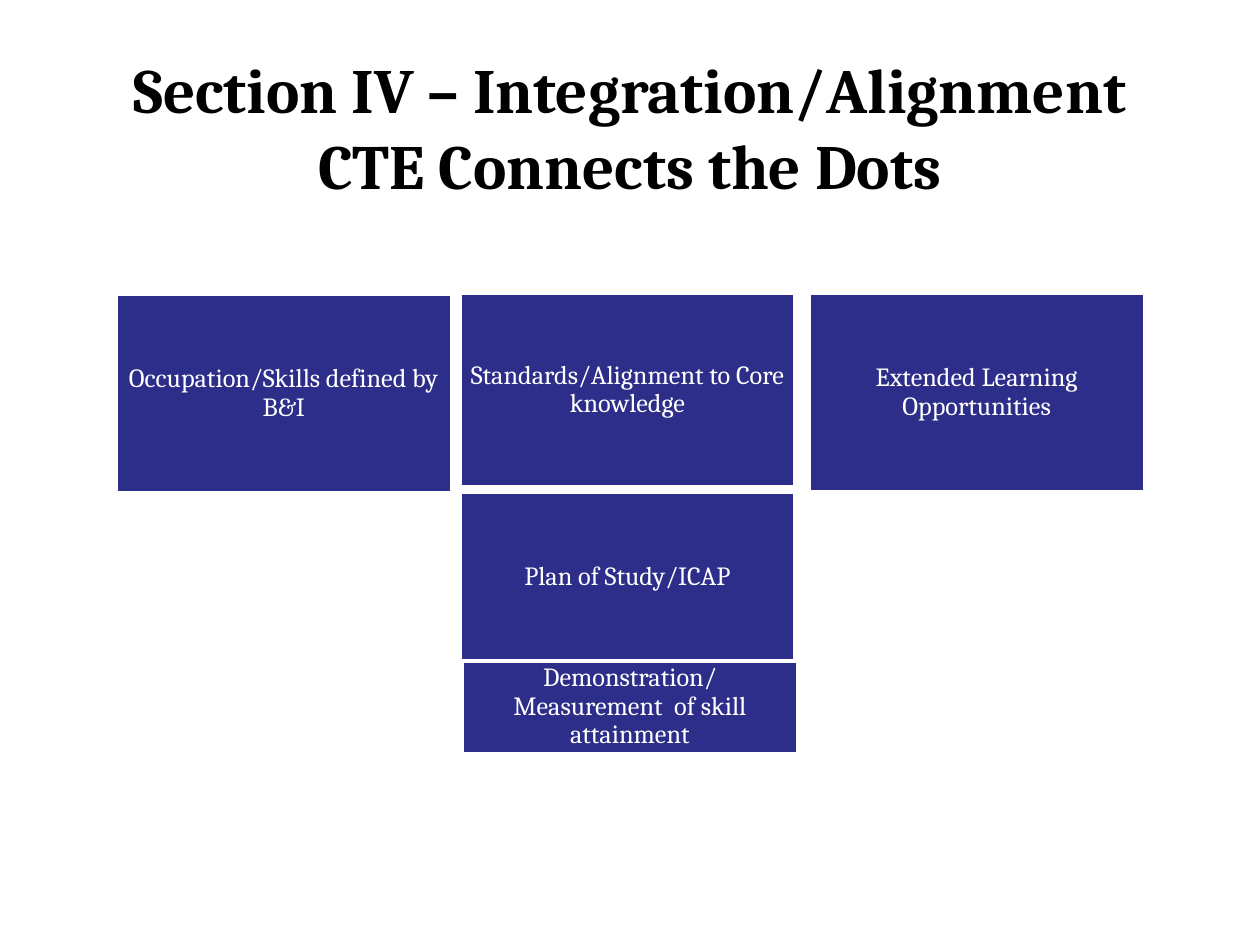
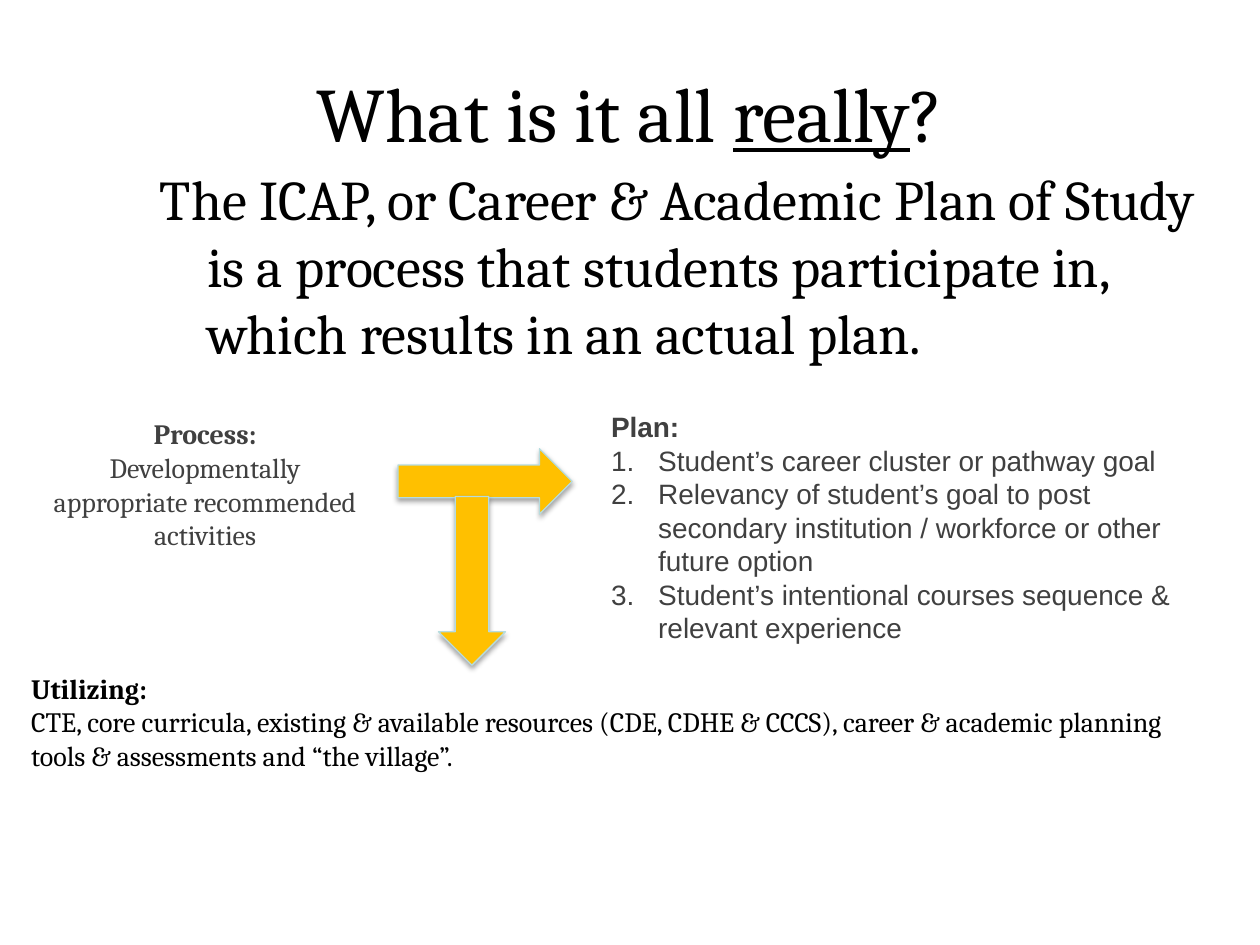
from copy import deepcopy

from lxml.etree import SubElement
from pptx import Presentation
from pptx.dml.color import RGBColor
from pptx.enum.shapes import MSO_SHAPE as Preset
from pptx.enum.text import MSO_ANCHOR as Anchor, MSO_AUTO_SIZE as AutoSize, PP_ALIGN as Align
from pptx.oxml.ns import qn
from pptx.util import Cm, Pt

NAVY = RGBColor(0x2D, 0x2D, 0x8A)
AMBER = RGBColor(0xFF, 0xC0, 0x00)
PALE_TEAL = RGBColor(0xB6, 0xDC, 0xDF)
CHARCOAL = RGBColor(0x40, 0x40, 0x40)
BLACK = RGBColor(0, 0, 0)
WHITE = RGBColor(0xFF, 0xFF, 0xFF)

TITLE_ONLY, TITLE_AND_BODY = 5, 1
HANGING = Cm(0.95)


class Deck:
    serif = "Cambria"
    sans = "Arial"

    def __init__(self):
        self.presentation = Presentation()
        self.presentation.slide_width = Cm(25.4)
        self.presentation.slide_height = Cm(19.05)
        self.slide = None

    def new_slide(self, layout):
        layouts = self.presentation.slide_layouts
        self.slide = self.presentation.slides.add_slide(layouts[layout])

    def place(self, shape, area):
        shape.left, shape.top, shape.width, shape.height = map(Cm, area)

    def style(self, paragraph, size, color, bold=False, font=None, align=Align.LEFT):
        paragraph.alignment = align
        for run in paragraph.runs:
            run.font.name = font or self.serif
            run.font.size = Pt(size)
            run.font.bold = bold
            run.font.color.rgb = color
        for line_break in paragraph._p.findall(qn("a:br")):
            line_break.append(deepcopy(paragraph.runs[0]._r.rPr))

    def hang(self, paragraph, numbered=False):
        properties = paragraph._p.get_or_add_pPr()
        properties.set("marL", str(HANGING))
        properties.set("indent", str(-HANGING))
        if numbered:
            SubElement(properties, qn("a:buFont"), typeface="+mj-lt")
            SubElement(properties, qn("a:buAutoNum"), type="arabicPeriod")
        else:
            SubElement(properties, qn("a:buNone"))

    def title(self, text, area, size, bold=False, underlined=None):
        heading = self.slide.shapes.title
        self.place(heading, area)
        frame = heading.text_frame
        frame.auto_size = AutoSize.NONE
        frame.vertical_anchor = Anchor.MIDDLE
        paragraph = frame.paragraphs[0]
        if underlined:
            before, after = text.split(underlined)
            for part in (before, underlined, after):
                run = paragraph.add_run()
                run.text = part
                run.font.underline = part == underlined
        else:
            paragraph.text = text
        self.style(paragraph, size, BLACK, bold, align=Align.CENTER)

    def body(self, text, area, size):
        statement = self.slide.placeholders[1]
        self.place(statement, area)
        frame = statement.text_frame
        frame.text = text
        frame.auto_size = AutoSize.NONE
        paragraph = frame.paragraphs[0]
        self.hang(paragraph)
        paragraph.space_before = Pt(0)
        self.style(paragraph, size, BLACK)

    def box(self, text, area):
        block = self.slide.shapes.add_shape(Preset.RECTANGLE, *map(Cm, area))
        block.shadow.inherit = False
        block.fill.solid()
        block.fill.fore_color.rgb = NAVY
        block.line.color.rgb = WHITE
        block.line.width = Pt(2)
        frame = block.text_frame
        frame.text = text
        frame.word_wrap = True
        frame.vertical_anchor = Anchor.MIDDLE
        frame.margin_left = frame.margin_right = Cm(0.15)
        frame.margin_top = frame.margin_bottom = Cm(0.15)
        paragraph = frame.paragraphs[0]
        paragraph.line_spacing = 0.9
        self.style(paragraph, 15, WHITE, align=Align.CENTER)

    def arrow(self, area, rotation=0):
        pointer = self.slide.shapes.add_shape(Preset.DOWN_ARROW, *map(Cm, area))
        pointer.rotation = rotation
        pointer.fill.solid()
        pointer.fill.fore_color.rgb = AMBER
        pointer.line.color.rgb = PALE_TEAL
        pointer.line.width = Pt(0.75)
        pointer.shadow.inherit = False
        effects = pointer._element.spPr.find(qn("a:effectLst"))
        shadow = SubElement(effects, qn("a:outerShdw"), blurRad=str(Pt(3.1)),
                            dist=str(Pt(1.8)), dir="5400000", rotWithShape="0")
        shade = SubElement(shadow, qn("a:srgbClr"), val=str(BLACK))
        SubElement(shade, qn("a:alpha"), val="35000")

    def note(self, heading, lines, area, color, font=None, align=Align.LEFT, numbered=False):
        frame = self.slide.shapes.add_textbox(*map(Cm, area)).text_frame
        frame.word_wrap = True
        frame.auto_size = AutoSize.SHAPE_TO_FIT_TEXT
        frame.text = heading
        self.style(frame.paragraphs[0], 16, color, True, font, align)
        for line in lines:
            paragraph = frame.add_paragraph()
            paragraph.text = line
            if numbered:
                self.hang(paragraph, numbered=True)
            self.style(paragraph, 16, color, False, font, align)


def connect_the_dots(deck):
    deck.new_slide(TITLE_ONLY)
    deck.title("Section IV – Integration/Alignment\vCTE Connects the Dots",
               (1.9, 1.27, 21.59, 2.54), 36, bold=True)
    box_width = 6.76
    for text, left, top, height in (
        ("Occupation/Skills defined by B&I", 2.34, 5.94, 3.99),
        ("Standards/Alignment to Core knowledge", 9.27, 5.92, 3.89),
        ("Extended Learning Opportunities", 16.31, 5.92, 3.99),
        ("Demonstration/Measurement  of skill attainment", 9.32, 13.31, 1.88),
        ("Plan of Study/ICAP", 9.27, 9.93, 3.4),
    ):
        deck.box(text, (left, top, box_width, height))


def process_and_plan(deck):
    deck.new_slide(TITLE_AND_BODY)
    deck.title("What is it all really?", (1.9, 0.66, 21.59, 3.18), 44, underlined="really")
    deck.body("The ICAP, or Career & Academic Plan of Study is a process that students "
              "participate in, which results in an actual plan.",
              (2.97, 3.18, 21.59, 10.19), 32)
    deck.arrow((9.12, 7.95, 1.32, 3.51), rotation=270)
    deck.note("Process:", ["Developmentally appropriate recommended activities"],
              (0.81, 8.28, 6.65, 3), CHARCOAL, align=Align.CENTER)
    deck.arrow((8.84, 10.01, 1.35, 3.4))
    deck.note("Plan:", [
        "Student’s career cluster or pathway goal",
        "Relevancy of student’s goal to post secondary institution / workforce or other "
        "future option",
        "Student’s intentional courses sequence & relevant experience",
    ], (12.07, 8.13, 12.7, 5.05), CHARCOAL, font=deck.sans, numbered=True)
    deck.note("Utilizing:", [
        "CTE, core curricula, existing & available resources (CDE, CDHE & CCCS), career & "
        "academic planning tools & assessments and “the village”.",
    ], (0.38, 13.41, 24.33, 2.31), BLACK)


def main():
    deck = Deck()
    connect_the_dots(deck)
    process_and_plan(deck)
    deck.presentation.save("out.pptx")


if __name__ == "__main__":
    main()
